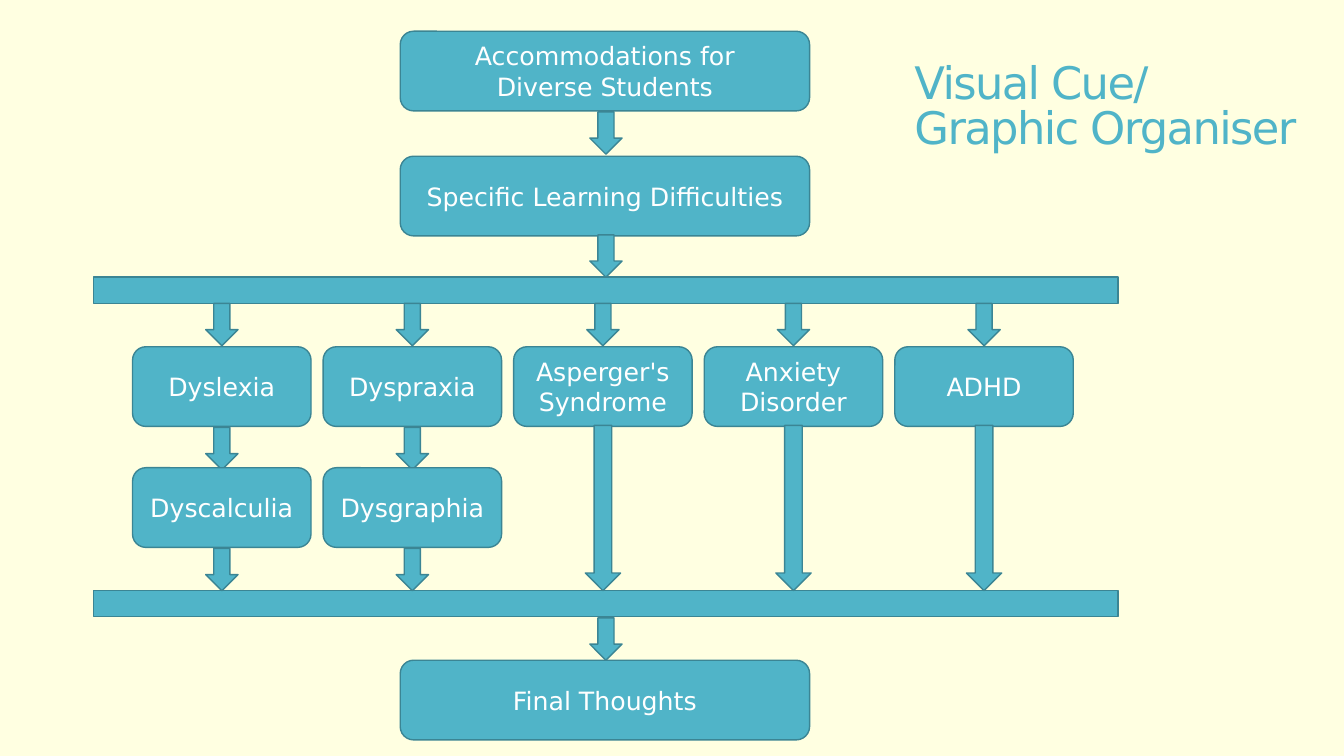
from dataclasses import dataclass

from pptx import Presentation
from pptx.dml.color import RGBColor
from pptx.enum.shapes import MSO_SHAPE as Shape
from pptx.enum.text import MSO_ANCHOR as Anchor, MSO_AUTO_SIZE as AutoSize, PP_ALIGN as Align
from pptx.util import Inches, Pt


@dataclass(frozen=True)
class Theme:
    font: str = "DejaVu Sans"
    background: RGBColor = RGBColor(0xFF, 0xFF, 0xE1)
    accent: RGBColor = RGBColor(0x50, 0xB4, 0xC8)
    outline: RGBColor = RGBColor(0x3B, 0x85, 0x94)
    box_text: RGBColor = RGBColor(0xFF, 0xFF, 0xFF)
    title_size: Pt = Pt(32)
    box_size: Pt = Pt(18)
    line_width: Pt = Pt(1)


class FlowSlide:
    """Lengths are in inches; flow elements are placed by their centre line."""

    BOX_HEIGHT = 0.79

    def __init__(self, prs, theme):
        self.theme = theme
        self.slide = prs.slides.add_slide(prs.slide_layouts[5])
        fill = self.slide.background.fill
        fill.solid()
        fill.fore_color.rgb = theme.background

    def style_text(self, p, size, color):
        p.font.name = self.theme.font
        p.font.size = size
        p.font.color.rgb = color

    def title(self, text, left, top, width, height):
        s = self.slide.shapes.title
        s.left, s.top, s.width, s.height = map(Inches, (left, top, width, height))
        tf = s.text_frame
        tf.auto_size = AutoSize.NONE
        tf.word_wrap = True
        tf.vertical_anchor = Anchor.MIDDLE
        p = tf.paragraphs[0]
        p.text = text
        p.alignment = Align.LEFT
        p.line_spacing = 0.85
        self.style_text(p, self.theme.title_size, self.theme.accent)
        for r in p.runs:
            r._r.get_or_add_rPr().set("spc", "-120")

    def block(self, kind, center, top, width, height):
        s = self.slide.shapes.add_shape(
            kind, Inches(center - width / 2), Inches(top), Inches(width), Inches(height))
        s.shadow.inherit = False
        s.fill.solid()
        s.fill.fore_color.rgb = self.theme.accent
        s.line.color.rgb = self.theme.outline
        s.line.width = self.theme.line_width
        return s

    def box(self, text, center, top, width):
        s = self.block(Shape.ROUNDED_RECTANGLE, center, top, width, self.BOX_HEIGHT)
        tf = s.text_frame
        tf.word_wrap = True
        tf.vertical_anchor = Anchor.MIDDLE
        p = tf.paragraphs[0]
        p.text = text
        p.alignment = Align.CENTER
        self.style_text(p, self.theme.box_size, self.theme.box_text)

    def bar(self, center, top):
        self.block(Shape.RECTANGLE, center, top, 10.16, 0.26)

    def arrow(self, center, top, width=0.32, height=0.42):
        self.block(Shape.DOWN_ARROW, center, top, width, height)


def main():
    prs = Presentation()
    prs.slide_width, prs.slide_height = Inches(13.33), Inches(7.5)
    flow = FlowSlide(prs, Theme())
    flow.title("Visual Cue/\vGraphic Organiser", 8.97, 0.37, 4.15, 1.41)

    # Main axis: headings, the two bars and the conclusion
    axis, wide = 6.0, 4.06
    for text, top in (("Accommodations for\vDiverse Students", 0.31),
                      ("Specific Learning Difficulties", 1.55),
                      ("Final Thoughts", 6.55)):
        flow.box(text, axis, top, wide)
    for top in (2.75, 5.86):
        flow.bar(axis + 0.01, top)
    for top in (1.11, 2.33, 6.13):
        flow.arrow(axis + 0.01, top)

    # Five columns between the bars, the first two with a second box
    first_center, pitch, narrow = 2.2, 1.89, 1.77
    columns = (("Dyslexia", "Dyscalculia"), ("Dyspraxia", "Dysgraphia"),
               ("Asperger's Syndrome",), ("Anxiety\vDisorder",), ("ADHD",))
    for i, (upper, *lower) in enumerate(columns):
        center = first_center + i * pitch
        flow.arrow(center, 3.01)
        flow.box(upper, center, 3.44, narrow)
        if lower:
            flow.arrow(center, 4.24)
            flow.box(lower[0], center, 4.64, narrow)
            flow.arrow(center, 5.44)
        else:
            flow.arrow(center, 4.22, 0.35, 1.64)

    prs.save("out.pptx")


if __name__ == "__main__":
    main()
